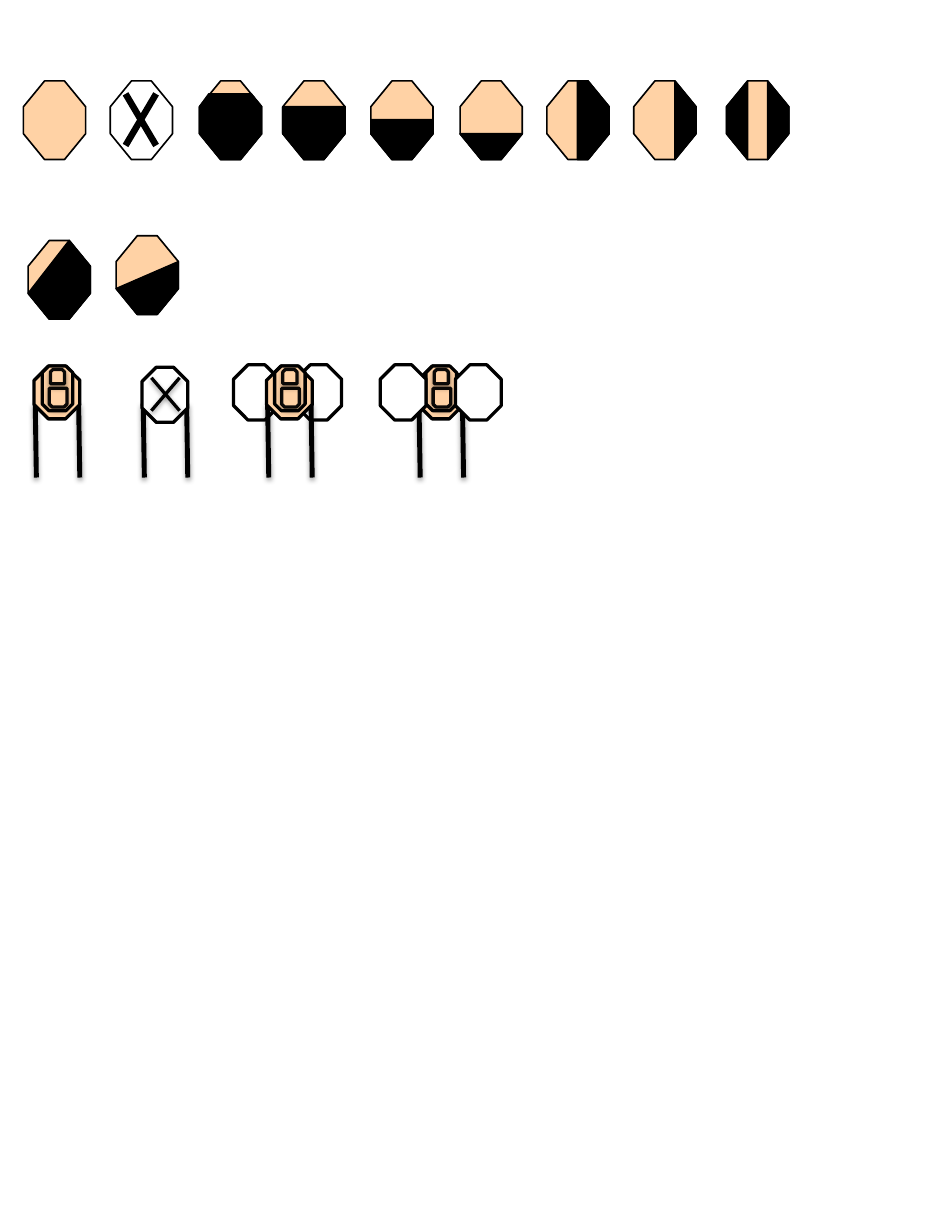
from lxml.etree import SubElement
from pptx import Presentation
from pptx.dml.color import RGBColor
from pptx.enum.shapes import MSO_CONNECTOR, MSO_SHAPE as Shape
from pptx.oxml.ns import qn
from pptx.util import Inches, Pt

TAN, BLACK, WHITE = "FFD2A5", "000000", "FFFFFF"

# Corner grid of a target, measured from its top left
X0, X1, X2, X3 = 0, 0.18, 0.35, 0.53
Y0, Y1, Y2, Y3 = 0, 0.22, 0.45, 0.67
XM, YM, Y_HIGH = 0.26, 0.33, 0.11
OUTLINE = [(X1, Y0), (X2, Y0), (X3, Y1), (X3, Y2),
           (X2, Y3), (X1, Y3), (X0, Y2), (X0, Y1)]
BASE = [(X3, Y2), (X2, Y3), (X1, Y3), (X0, Y2)]
RIGHT_EDGE = [(X3, Y1), (X3, Y2), (X2, Y3)]
LEFT_SIDE = [(X1, Y0), (X1, Y3), (X0, Y2), (X0, Y1)]
RIGHT_SIDE = [(X2, Y0), *RIGHT_EDGE]

# Left, top and black zones of each target
TARGETS = [
    (0.2, 0.69, []),
    (1.7, 0.69, [[(0.08, Y_HIGH), (0.44, Y_HIGH), (X3, Y1), *BASE, (X0, Y1)]]),
    (2.41, 0.69, [[(X0, Y1), (X3, Y1), *BASE]]),
    (3.16, 0.69, [[(X0, YM), (X3, YM), *BASE]]),
    (3.92, 0.69, [BASE]),
    (4.66, 0.69, [[(XM, Y0), *RIGHT_SIDE, (XM, Y3)]]),
    (5.4, 0.69, [RIGHT_SIDE]),
    (6.19, 0.69, [LEFT_SIDE, RIGHT_SIDE]),
    (0.24, 2.05, [[(X2, Y0), (X3, Y1), *BASE]]),
    (0.99, 2.01, [[(X3, Y1), *BASE]]),
]


def color(value):
    return RGBColor.from_string(value)


class Drawing:
    """Line style and the slide, or the group on it, being drawn."""

    def __init__(self, slide):
        self.slide = slide
        self.shapes = slide.shapes

    def group(self):
        self.shapes = self.slide.shapes.add_group_shape().shapes

    def ungroup(self):
        self.shapes = self.slide.shapes

    def finish(self, shape, width, fill=None, shadow=None, line_alpha=None):
        if fill:
            shape.fill.solid()
            shape.fill.fore_color.rgb = color(fill)
        shape.line.color.rgb = color(BLACK)
        shape.line.width = Pt(width)
        properties = shape._element.spPr
        if line_alpha:
            line_color = properties.find(qn("a:ln")).find(".//" + qn("a:srgbClr"))
            SubElement(line_color, qn("a:alpha"), val=str(line_alpha * 1000))
        effects = SubElement(properties, qn("a:effectLst"))
        if shadow:
            distance, alpha = shadow
            outer = SubElement(effects, qn("a:outerShdw"), blurRad=str(Pt(3.1)),
                               dist=str(Pt(distance)), dir="5400000",
                               rotWithShape="0")
            shade = SubElement(outer, qn("a:srgbClr"), val=BLACK)
            SubElement(shade, qn("a:alpha"), val=str(alpha * 1000))

    def polygon(self, left, top, points, fill):
        corners = [(Inches(left + x), Inches(top + y)) for x, y in points]
        builder = self.shapes.build_freeform(*corners[0])
        builder.add_line_segments(corners[1:], close=True)
        self.finish(builder.convert_to_shape(), 1, fill)

    def line(self, start, end, width, shadow=None):
        ends = [Inches(value) for value in (*start, *end)]
        connector = self.shapes.add_connector(MSO_CONNECTOR.STRAIGHT, *ends)
        self.finish(connector, width, shadow=shadow)

    def cross(self, left, top, width, height, weight, shadow=None):
        right, bottom = left + width, top + height
        self.line((right, top), (left, bottom), weight, shadow)
        self.line((left, top), (right, bottom), weight, shadow)

    def preset(self, kind, box, fill, adjustments=(), flip=False, **effects):
        shape = self.shapes.add_shape(kind, *[Inches(value) for value in box])
        for index, value in enumerate(adjustments):
            shape.adjustments[index] = value
        if flip:
            shape._element.spPr.xfrm.set("flipV", "1")
        self.finish(shape, 2, fill, **effects)

    def target(self, left, top, zones, fill=TAN):
        if zones:
            self.group()
        self.polygon(left, top, OUTLINE, fill)
        for zone in zones:
            self.polygon(left, top, zone, BLACK)
        self.ungroup()

    def legs(self, left):
        for x in (left + 0.01, left + 0.38):
            self.line((x, 3.44), (x + 0.01, 4.07), 3, (1.6, 38))

    def plate(self, left, top, height, fill):
        self.preset(Shape.OCTAGON, (left, top, 0.39, height), fill, [0.313])

    def boards(self, lefts):
        for left in lefts:
            self.plate(left, 3.11, 0.47, WHITE)

    def figure(self, left):
        snip = Shape.SNIP_2_SAME_RECTANGLE
        effects = {"shadow": (1.8, 35), "line_alpha": 94}
        self.legs(left)
        self.plate(left, 3.12, 0.45, TAN)
        self.preset(snip, (left + 0.07, 3.12, 0.26, 0.38), TAN, [0.214, 0.219])
        self.preset(snip, (left + 0.13, 3.31, 0.15, 0.16), TAN, flip=True, **effects)
        self.preset(snip, (left + 0.14, 3.15, 0.12, 0.12), TAN, **effects)


def main():
    presentation = Presentation()
    page = {"slide_width": Inches(8), "slide_height": Inches(10.5)}
    for name, value in page.items():
        setattr(presentation, name, value)
    slide = presentation.slides.add_slide(presentation.slide_layouts[6])
    drawing = Drawing(slide)

    # Targets with black zones
    for left, top, zones in TARGETS:
        drawing.target(left, top, zones)

    # White target with a cross
    drawing.group()
    drawing.polygon(0.94, 0.69, OUTLINE, WHITE)
    drawing.cross(1.07, 0.8, 0.26, 0.44, 4)

    # Standing figure
    drawing.group()
    drawing.figure(0.29)

    # Standing plate with a cross
    drawing.group()
    drawing.legs(1.21)
    drawing.plate(1.21, 3.13, 0.47, WHITE)
    drawing.cross(1.29, 3.22, 0.24, 0.28, 2, (1.6, 38))

    # Figure in front of two white boards
    drawing.group()
    drawing.boards([2.52, 1.99])
    drawing.figure(2.27)

    # Figure behind two white boards
    drawing.group()
    drawing.figure(3.56)
    drawing.boards([3.88, 3.24])

    presentation.save("out.pptx")


if __name__ == "__main__":
    main()
